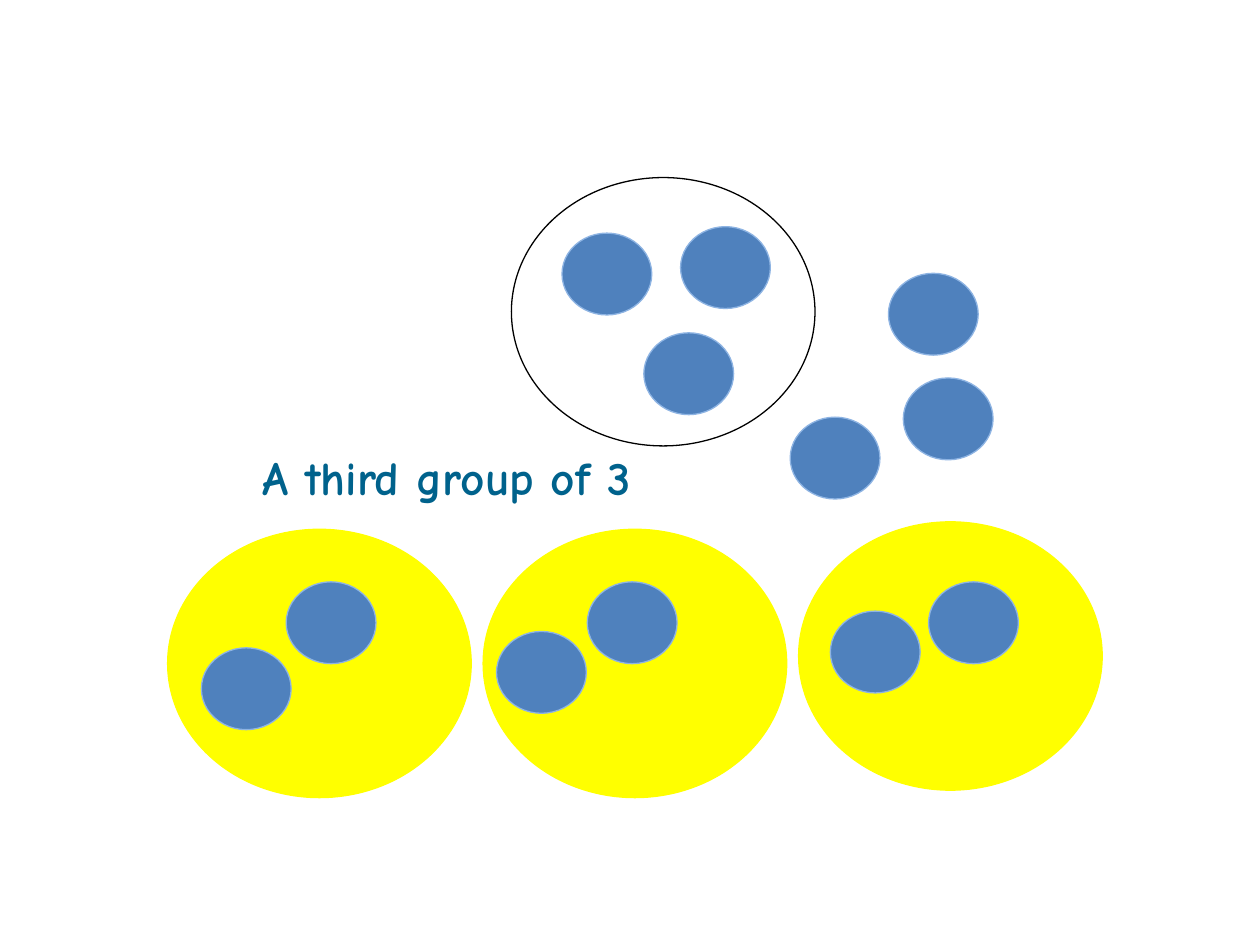
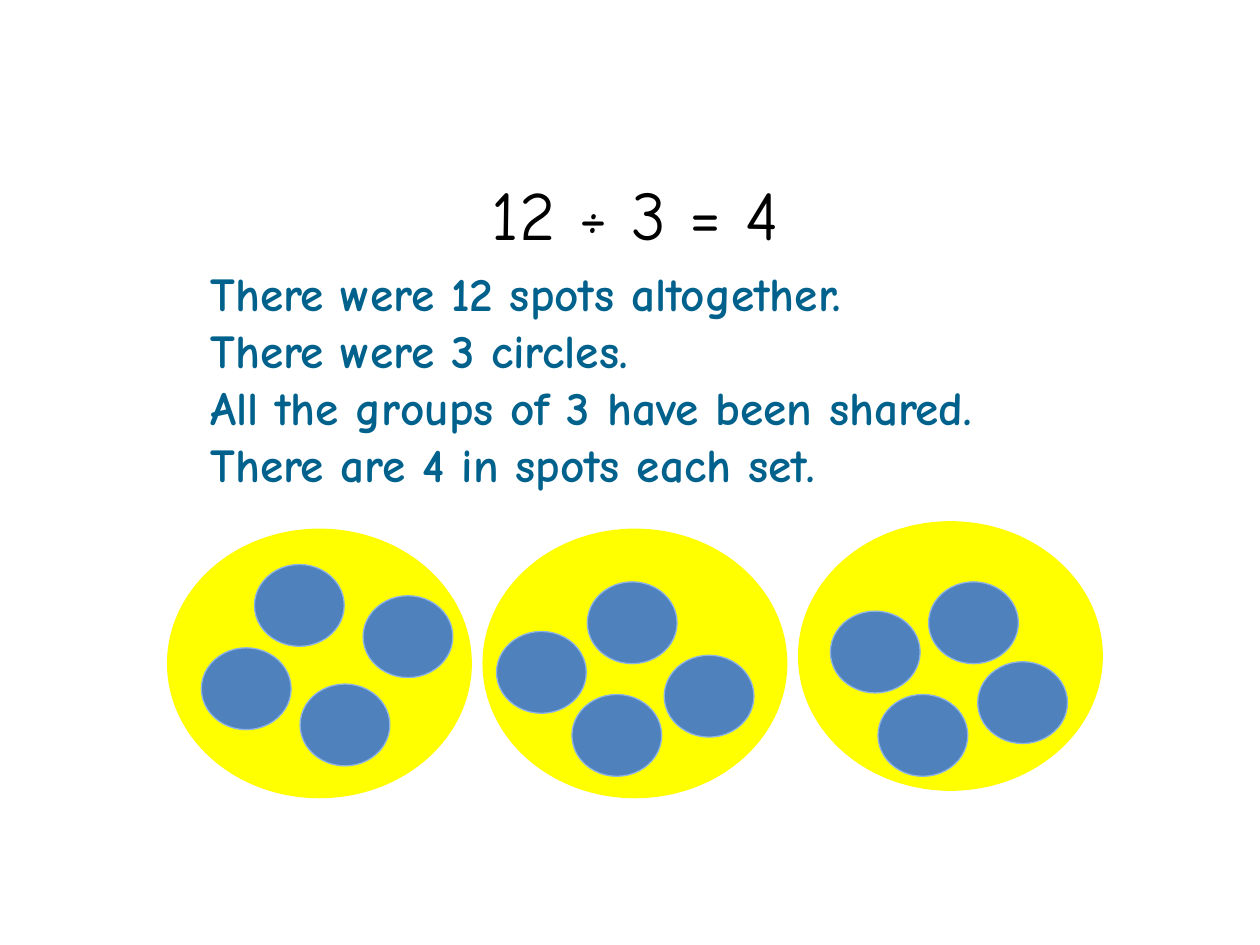
from pptx import Presentation
from pptx.dml.color import RGBColor
from pptx.enum.shapes import MSO_SHAPE
from pptx.enum.text import MSO_ANCHOR, PP_ALIGN
from pptx.util import Cm, Pt

# Colours and font
BLACK = RGBColor(0x00, 0x00, 0x00)
YELLOW = RGBColor(0xFF, 0xFF, 0x00)
BLUE = RGBColor(0x4F, 0x81, 0xBD)
EDGE = RGBColor(0x8E, 0xB4, 0xE3)
TEAL = RGBColor(0x00, 0x62, 0x8C)
FONT = "Comic Neue"

# Text formats
SUM = {"name": FONT, "size": Pt(39.6), "bold": False}
NOTE = {"name": FONT, "size": Pt(27), "bold": True}
SUM_BOX = {"word_wrap": True, "vertical_anchor": MSO_ANCHOR.MIDDLE}
NOTE_BOX = {"word_wrap": True, "vertical_anchor": MSO_ANCHOR.BOTTOM,
            "margin_left": Cm(0.18), "margin_right": Cm(0.18),
            "margin_top": Cm(0.1), "margin_bottom": Cm(0.1)}

# Sizes and places in centimetres
SET_SIZE = (6.12, 5.41)
SPOT_SIZE = (1.81, 1.65)
SET_LEFT, SET_STEP = 3.38, 6.36
SET_TOPS = (10.67, 10.67, 10.52)

# Spots in the same place on both slides
SHARED = [(4.06, 13.06), (10.01, 12.73), (11.84, 11.73),
          (16.74, 12.32), (18.72, 11.73)]
# Spots still to be shared: three in the ring, three outside
RINGED = [(11.33, 4.7), (13.72, 4.57), (12.98, 6.71)]
LOOSE = [(15.93, 8.41), (18.21, 7.62), (17.91, 5.51)]
FIRST = [(5.77, 11.73)]
# Spots that complete the sets of four
ADDED = [(5.13, 11.38), (6.05, 13.79), (7.32, 12.01),
         (11.53, 14), (13.39, 13.21),
         (17.7, 14), (19.71, 13.34)]


def apply(target, form):
    for key, value in form.items():
        setattr(target, key, value)


def add_oval(slide, pos, size, edge, fill=None):
    oval = slide.shapes.add_shape(MSO_SHAPE.OVAL, *map(Cm, pos + size))
    oval.shadow.inherit = False
    if fill is None:
        oval.fill.background()
    else:
        oval.fill.solid()
        oval.fill.fore_color.rgb = fill
    oval.line.color.rgb = edge
    oval.line.width = Pt(0.75)


def add_sets(slide):
    for col, top in enumerate(SET_TOPS):
        left = SET_LEFT + col * SET_STEP
        add_oval(slide, (left, top), SET_SIZE, YELLOW, YELLOW)


def add_spots(slide, spots):
    for pos in spots:
        add_oval(slide, pos, SPOT_SIZE, EDGE, BLUE)


def add_text(slide, area, lines, font, color, box, align=PP_ALIGN.LEFT):
    frame = slide.shapes.add_textbox(*map(Cm, area)).text_frame
    apply(frame, box)
    frame.text = "\n".join(lines)
    for para in frame.paragraphs:
        para.alignment = align
        apply(para.font, font)
        para.font.color.rgb = color


def add_slide(deck):
    slide = deck.slides.add_slide(deck.slide_layouts[6])
    add_sets(slide)
    return slide


def main():
    deck = Presentation()
    deck.slide_width, deck.slide_height = Cm(25.4), Cm(19.05)

    # Sharing the third group
    slide = add_slide(deck)
    add_spots(slide, LOOSE + RINGED)
    add_oval(slide, (10.31, 3.58), SET_SIZE, BLACK)
    add_text(slide, (5.11, 8.86, 16.51, 1.42), ["A third group of 3"],
             NOTE, TEAL, NOTE_BOX)
    add_spots(slide, FIRST + SHARED)

    # The answer
    slide = add_slide(deck)
    add_text(slide, (9.07, 3.61, 7.47, 1.37), ["12 ÷ 3 = 4"],
             SUM, BLACK, SUM_BOX, PP_ALIGN.CENTER)
    add_text(slide, (4.06, 4.55, 17.22, 5.46),
             ["There were 12 spots altogether.",
              "There were 3 circles.",
              "All the groups of 3 have been shared.",
              "There are 4 in spots each set."],
             NOTE, TEAL, NOTE_BOX)
    add_spots(slide, SHARED + ADDED)

    deck.save("out.pptx")


if __name__ == "__main__":
    main()
